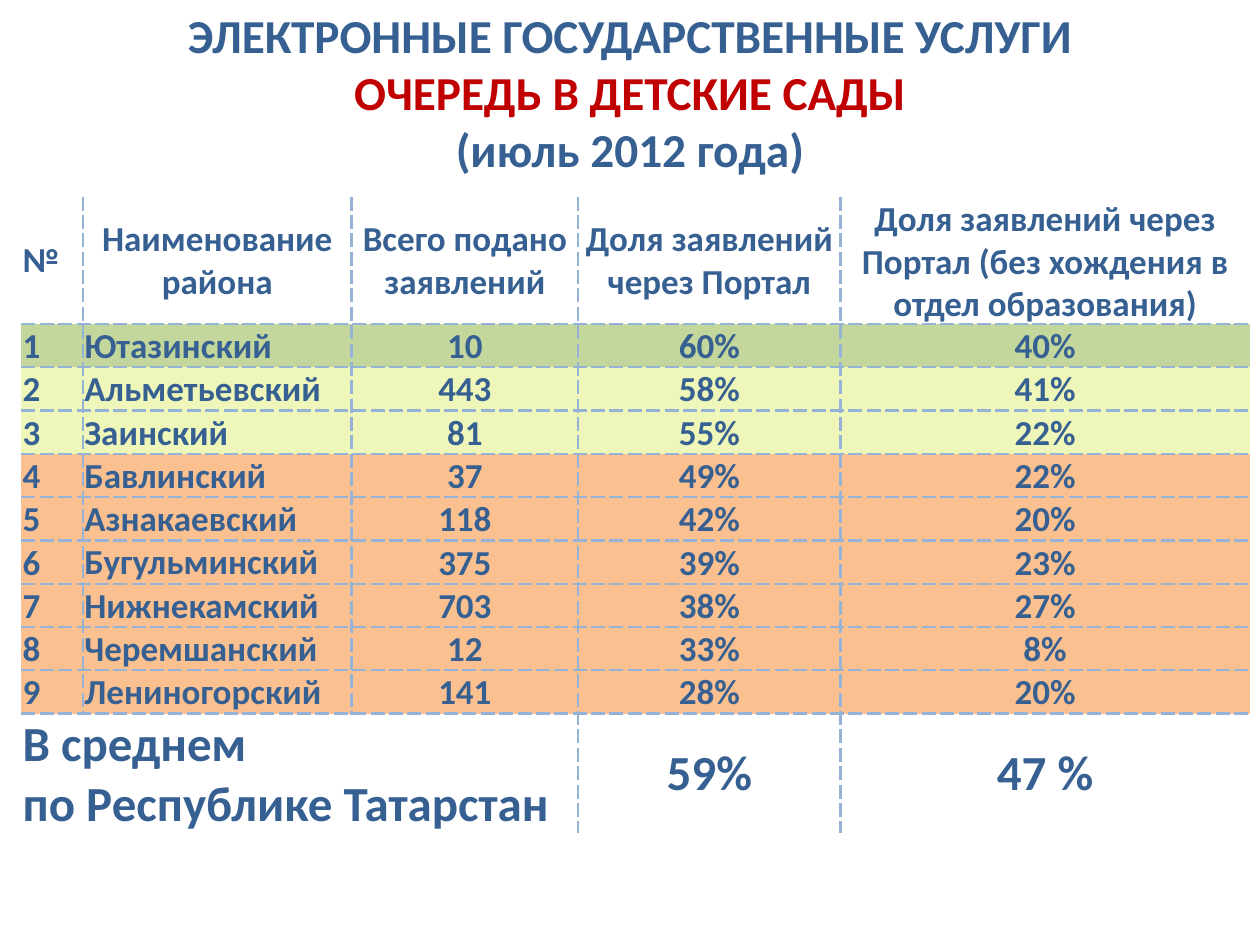
from dataclasses import dataclass

from lxml import etree
from pptx import Presentation
from pptx.dml.color import RGBColor
from pptx.enum import text
from pptx.oxml import ns
from pptx.util import Inches, Pt


@dataclass(frozen=True)
class Theme:
    font: str = "Calibri"
    blue: str = "376092"
    red: str = "C00000"
    border: str = "95B3D7"
    high: str = "C3D69B"
    medium: str = "EEF7B9"
    low: str = "FAC090"
    title: int = 27
    body: int = 20
    total: int = 28
    border_width: float = 1.5


THEME = Theme()

TITLE = [
    ("ЭЛЕКТРОННЫЕ ГОСУДАРСТВЕННЫЕ УСЛУГИ", THEME.blue),
    ("ОЧЕРЕДЬ В ДЕТСКИЕ САДЫ", THEME.red),
    ("(июль 2012 года)", THEME.blue),
]
HEADER = [
    "№",
    "Наименование района",
    "Всего подано заявлений",
    "Доля заявлений через Портал",
    "Доля заявлений через Портал (без хождения в отдел образования)",
]
# District, applications, share via the portal, share without a visit, fill
DISTRICTS = [
    ("Ютазинский", 10, 60, 40, THEME.high),
    ("Альметьевский", 443, 58, 41, THEME.medium),
    ("Заинский", 81, 55, 22, THEME.medium),
    ("Бавлинский", 37, 49, 22, THEME.low),
    ("Азнакаевский", 118, 42, 20, THEME.low),
    ("Бугульминский", 375, 39, 23, THEME.low),
    ("Нижнекамский", 703, 38, 27, THEME.low),
    ("Черемшанский", 12, 33, 8, THEME.low),
    ("Лениногорский", 141, 28, 20, THEME.low),
]
TOTAL = ["В среднем\nпо Республике Татарстан", "", "", "59%", "47 %"]
COLUMN_WIDTHS = [0.49, 2.13, 1.8, 2.08, 3.25]
HEADER_HEIGHT, ROW_HEIGHT = 0.88, 0.29


def format_paragraph(p, size, color, align):
    p.alignment = align
    for r in p.runs:
        r.font.name = THEME.font
        r.font.size = Pt(size)
        r.font.bold = True
        r.font.color.rgb = RGBColor.from_string(color)


def set_borders(cell, visible):
    """Dash the visible edges (letters from LRTB) and clear the others."""
    tc_pr = cell._tc.get_or_add_tcPr()
    for edge in "LRTB":
        ln = etree.SubElement(tc_pr, ns.qn(f"a:ln{edge}"))
        if edge not in visible:
            etree.SubElement(ln, ns.qn("a:noFill"))
            continue
        ln.set("w", str(Pt(THEME.border_width)))
        fill = etree.SubElement(ln, ns.qn("a:solidFill"))
        etree.SubElement(fill, ns.qn("a:srgbClr"), val=THEME.border)
        etree.SubElement(ln, ns.qn("a:prstDash"), val="sysDash")


def add_title(s, left, top, width, height):
    sp = s.shapes.title
    sp.left, sp.top, sp.width, sp.height = map(Inches, (left, top, width, height))
    tf = sp.text_frame
    tf.text = "\n".join(line for line, _ in TITLE)
    tf.word_wrap = True
    tf.auto_size = text.MSO_AUTO_SIZE.SHAPE_TO_FIT_TEXT
    tf.vertical_anchor = text.MSO_ANCHOR.TOP
    for p, (_, color) in zip(tf.paragraphs, TITLE):
        format_paragraph(p, THEME.title, color, text.PP_ALIGN.CENTER)


def fill_cell(cell, value, size, color, align, anchor):
    cell.margin_left = cell.margin_right = cell.margin_top = Inches(0.01)
    cell.margin_bottom = 0
    cell.vertical_anchor = anchor
    cell.text_frame.text = value
    for p in cell.text_frame.paragraphs:
        format_paragraph(p, size, THEME.blue, align)
    if color:
        cell.fill.solid()
        cell.fill.fore_color.rgb = RGBColor.from_string(color)
    else:
        cell.fill.background()


def add_district_table(s, left, top, width, height):
    # Each row: texts, type size, fill
    rows = [(HEADER, THEME.body, None)]
    for number, (name, count, portal, no_visit, color) in enumerate(DISTRICTS, 1):
        values = [str(number), name, str(count), f"{portal}%", f"{no_visit}%"]
        rows.append((values, THEME.body, color))
    rows.append((TOTAL, THEME.total, None))
    last_row, last_col = len(rows) - 1, len(HEADER) - 1

    table = s.shapes.add_table(
        len(rows), len(HEADER), *map(Inches, (left, top, width, height))
    ).table
    table.first_row = table.horz_banding = False
    for column, column_width in zip(table.columns, COLUMN_WIDTHS):
        column.width = Inches(column_width)
    for i, row in enumerate(table.rows):
        row.height = Inches(ROW_HEIGHT if i else HEADER_HEIGHT)
    table.cell(last_row, 0).merge(table.cell(last_row, 2))

    for i, (values, size, color) in enumerate(rows):
        is_district = 0 < i < last_row
        for j, value in enumerate(values):
            cell = table.cell(i, j)
            # Lines run between cells only, never round the outside
            inside = {"L": j > 0, "R": j < last_col, "T": i > 0, "B": i < last_row}
            if cell.is_spanned:
                inside["L"] = False
                inside["R"] = j == 2
            set_borders(cell, [edge for edge, shown in inside.items() if shown])
            is_left = j == 0 or (is_district and j == 1)
            align = text.PP_ALIGN.LEFT if is_left else text.PP_ALIGN.CENTER
            is_name = is_district and j == 1
            anchor = text.MSO_ANCHOR.BOTTOM if is_name else text.MSO_ANCHOR.MIDDLE
            fill_cell(cell, value, size, color, align, anchor)


def main():
    prs = Presentation()
    prs.slide_width, prs.slide_height = Inches(10), Inches(7.5)
    s = prs.slides.add_slide(prs.slide_layouts[5])
    add_title(s, 0, 0, 10, 1.46)
    table_height = HEADER_HEIGHT + ROW_HEIGHT * (len(DISTRICTS) + 1)
    add_district_table(s, 0.17, 1.56, sum(COLUMN_WIDTHS), table_height)
    prs.save("out.pptx")


if __name__ == "__main__":
    main()
